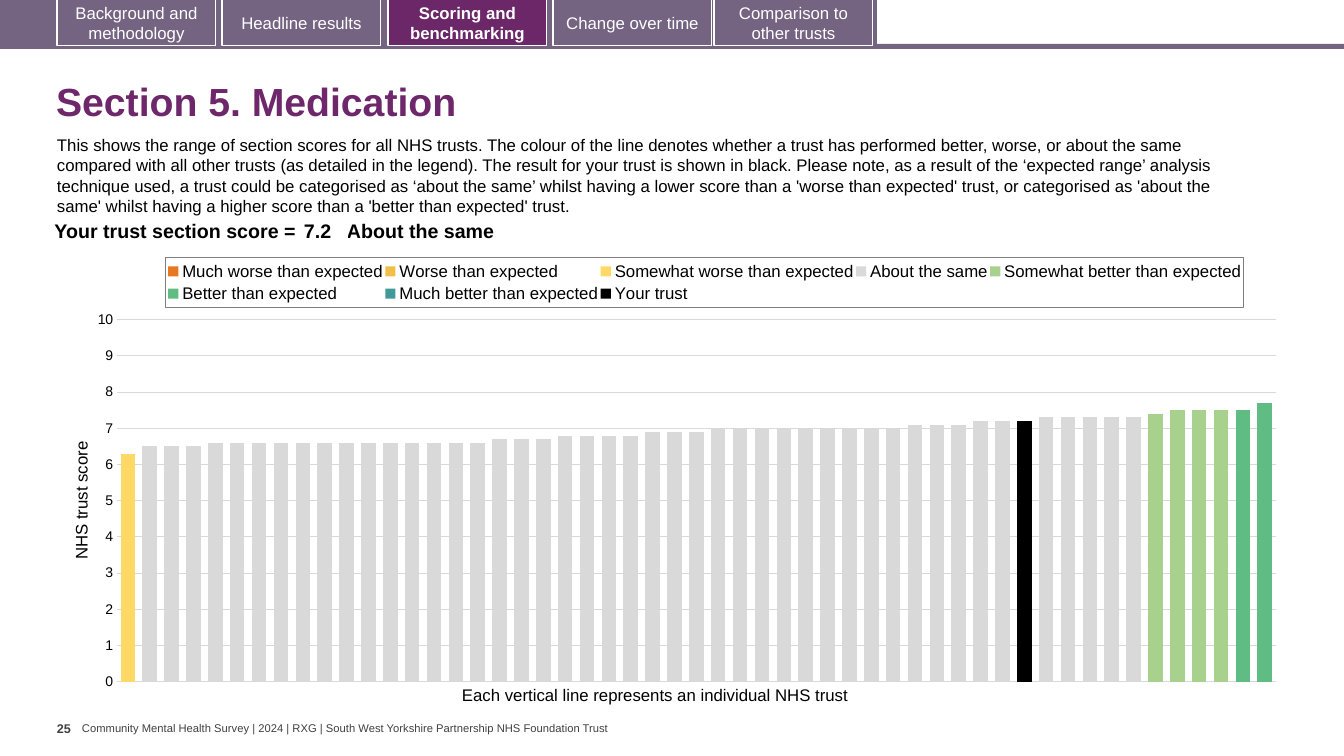
from copy import deepcopy

from lxml import etree
from pptx import Presentation
from pptx.chart.data import CategoryChartData
from pptx.dml.color import RGBColor
from pptx.enum.chart import XL_CHART_TYPE, XL_LEGEND_POSITION, XL_TICK_MARK
from pptx.enum.shapes import MSO_SHAPE
from pptx.enum.text import MSO_ANCHOR, MSO_AUTO_SIZE, PP_ALIGN
from pptx.oxml import parse_xml
from pptx.oxml.ns import qn
from pptx.util import Pt

RECT = MSO_SHAPE.RECTANGLE
MIDDLE, TOP = MSO_ANCHOR.MIDDLE, MSO_ANCHOR.TOP
LEFT, CENTER, RIGHT = PP_ALIGN.LEFT, PP_ALIGN.CENTER, PP_ALIGN.RIGHT
NO_TICK = XL_TICK_MARK.NONE
C_NS = "http://schemas.openxmlformats.org/drawingml/2006/chart"
A_NS = "http://schemas.openxmlformats.org/drawingml/2006/main"

TITLE = "Section 5. Medication"
INTRO = (
    "This shows the range of section scores for all NHS trusts. The colour of the line denotes "
    "whether a trust has performed better, worse, or about the same compared with all other trusts "
    "(as detailed in the legend). The result for your trust is shown in black. Please note, as a "
    "result of the ‘expected range’ analysis technique used, a trust could be categorised as ‘about "
    "the same’ whilst having a lower score than a 'worse than expected' trust, or categorised as "
    "'about the same' whilst having a higher score than a 'better than expected' trust."
)
CAPTION = "Each vertical line represents an individual NHS trust"
FOOTER = ("Community Mental Health Survey | 2024 | RXG | "
          "South West Yorkshire Partnership NHS Foundation Trust")
PAGE = "25"
AXIS_TITLE = "NHS trust score"

PURPLE, ACTIVE = "756382", "6B2768"
# label, left
TABS = [
    ("Background and methodology", 57),
    ("Headline results", 222),
    ("Scoring and benchmarking", 388),
    ("Change over time", 553),
    ("Comparison to other trusts", 714),
]
ACTIVE_TAB = "Scoring and benchmarking"

# text, column width, side margin, alignment
SCORE_CELLS = [
    ("Your trust section score =", 265, 4, RIGHT),
    ("7.2", 47, 4, LEFT),
    ("About the same", 866, 0, LEFT),
]

TRUSTS = 53
# name, colour, position of the first bar, (score, number of trusts)
BANDS = [
    ("Much worse than expected", "E87722", 0, []),
    ("Worse than expected", "F1BE48", 0, []),
    ("Somewhat worse than expected", "FFD966", 0, [(6.3, 1)]),
    ("About the same", "D9D9D9", 1,
     [(6.5, 3), (6.6, 13), (6.7, 3), (6.8, 4), (6.9, 3), (7, 9), (7.1, 3), (7.2, 3), (7.3, 5)]),
    ("Somewhat better than expected", "A9D18E", 47, [(7.4, 1), (7.5, 3)]),
    ("Better than expected", "5FBD83", 51, [(7.5, 1), (7.7, 1)]),
    ("Much better than expected", "419999", 0, []),
    ("Your trust", "000000", 41, [(7.2, 1)]),
]


def px(n):
    return round(n * 914400 / 100.8)


def box(*lengths):
    return [px(n) for n in lengths]


def rgb(color):
    return RGBColor.from_string(color)


def style(font, size, color="000000", bold=False):
    font.name, font.size, font.bold = "Arial", Pt(size), bold
    font.color.rgb = rgb(color)


def write(tf, text, size, color="000000", bold=False, align=LEFT):
    tf.text = text
    p = tf.paragraphs[0]
    p.alignment = align
    style(p.runs[0].font, size, color, bold)


def add_rect(s, at, fill, line=None):
    sp = s.shapes.add_shape(RECT, *box(*at))
    sp.shadow.inherit = False
    sp.fill.solid()
    sp.fill.fore_color.rgb = rgb(fill)
    if line:
        sp.line.color.rgb = rgb(line)
        sp.line.width = Pt(0.75)
    else:
        sp.line.fill.background()
    return sp


def add_text(s, at, text, size, color="000000", bold=False, wrap=False,
             anchor=TOP, margins=(10, 5)):
    tf = s.shapes.add_textbox(*box(*at)).text_frame
    tf.word_wrap, tf.vertical_anchor = wrap, anchor
    tf.margin_left = tf.margin_right = px(margins[0])
    tf.margin_top = tf.margin_bottom = px(margins[1])
    write(tf, text, size, color, bold)


def add_tabs(s):
    add_rect(s, (0, 44, 1344, 5), PURPLE)
    add_rect(s, (0, 0, 877, 47), PURPLE)
    for label, left in TABS:
        active = label == ACTIVE_TAB
        sp = add_rect(s, (left, -1, 159, 47), ACTIVE if active else PURPLE, "FFFFFF")
        sp.text_frame.word_wrap = True
        sp.text_frame.vertical_anchor = MIDDLE
        write(sp.text_frame, label, 12, "FFFFFF", active, CENTER)


def add_score(s):
    width = sum(cell[1] for cell in SCORE_CELLS)
    table = s.shapes.add_table(1, len(SCORE_CELLS), *box(35, 217, width, 31)).table
    table.first_row = table.horz_banding = False
    for i, (text, col_width, margin, align) in enumerate(SCORE_CELLS):
        table.columns[i].width = px(col_width)
        cell = table.cell(0, i)
        cell.fill.background()
        cell.margin_left = cell.margin_right = px(margin)
        cell.margin_top = cell.margin_bottom = px(4)
        write(cell.text_frame, text, 14, bold=True, align=align)


def set_layout(parent, index, fractions, inner=False):
    """Place a chart part by fractions (x, y, w, h) of the chart's size."""
    for old in parent.findall(qn("c:layout")):
        parent.remove(old)
    layout = etree.Element(qn("c:layout"))
    manual = etree.SubElement(layout, qn("c:manualLayout"))
    items = [("layoutTarget", "inner")] if inner else []
    items += [("xMode", "edge"), ("yMode", "edge")] + list(zip("xywh", fractions))
    for tag, value in items:
        etree.SubElement(manual, qn("c:" + tag)).set("val", str(value))
    parent.insert(index, layout)


def move_last_to_second_axis(chart):
    area = chart._chartSpace.chart.plotArea
    first = area.find(qn("c:barChart"))
    second = deepcopy(first)
    first.remove(first.findall(qn("c:ser"))[-1])
    for ser in second.findall(qn("c:ser"))[:-1]:
        second.remove(ser)
    first.addnext(second)
    cat, val = (deepcopy(axis._element) for axis in (chart.category_axis, chart.value_axis))
    for axis, own, other in ((cat, "50010", "50020"), (val, "50020", "50010")):
        axis.find(qn("c:axId")).set("val", own)
        axis.find(qn("c:crossAx")).set("val", other)
    for ref, own in zip(second.findall(qn("c:axId")), ("50010", "50020")):
        ref.set("val", own)
    for tag in ("c:majorGridlines", "c:title"):
        val.remove(val.find(qn(tag)))
    for tag, value in (("axPos", "r"), ("tickLblPos", "none"), ("crosses", "max")):
        val.find(qn("c:" + tag)).set("val", value)
    chart.value_axis._element.addnext(cat)
    cat.addnext(val)


def add_scores_chart(s):
    data = CategoryChartData()
    data.categories = [str(n + 1) for n in range(TRUSTS)]
    for name, _, start, runs in BANDS:
        values = [None] * start + [score for score, count in runs for _ in range(count)]
        data.add_series(name, values + [None] * (TRUSTS - len(values)))
    chart = s.shapes.add_chart(XL_CHART_TYPE.COLUMN_CLUSTERED, *box(68, 249, 1225, 448), data).chart
    chart.has_title = False
    style(chart.font, 10)
    plot = chart.plots[0]
    plot.gap_width, plot.overlap, plot.vary_by_categories = 50, 100, False
    for series, band in zip(plot.series, BANDS):
        series.format.fill.solid()
        series.format.fill.fore_color.rgb = rgb(band[1])

    chart.category_axis.visible = False
    axis = chart.value_axis
    axis.minimum_scale, axis.maximum_scale, axis.major_unit = 0, 10, 1
    axis.major_tick_mark = axis.minor_tick_mark = NO_TICK
    axis.format.line.fill.background()
    axis.major_gridlines.format.line.color.rgb = rgb("D9D9D9")
    axis.major_gridlines.format.line.width = Pt(0.75)
    axis.tick_labels.number_format, axis.tick_labels.number_format_is_linked = "0", False
    style(axis.tick_labels.font, 10)
    write(axis.axis_title.text_frame, AXIS_TITLE, 12, align=CENTER)

    chart.has_legend = True
    legend = chart.legend
    legend.position, legend.include_in_layout = XL_LEGEND_POSITION.TOP, False
    style(legend.font, 12)
    set_layout(legend._element, 1, (0.08, 0.02, 0.88, 0.11))
    legend._element.find(qn("c:overlay")).addnext(parse_xml(
        f'<c:spPr xmlns:c="{C_NS}" xmlns:a="{A_NS}"><a:ln w="9525"><a:solidFill>'
        '<a:srgbClr val="7F7F7F"/></a:solidFill></a:ln></c:spPr>'))
    set_layout(chart._chartSpace.chart.plotArea, 0, (0.04, 0.158, 0.946, 0.808), inner=True)
    move_last_to_second_axis(chart)


def main():
    prs = Presentation()
    prs.slide_width, prs.slide_height = box(1344, 756)
    s = prs.slides.add_slide(prs.slide_layouts[5])
    add_tabs(s)
    title = s.shapes.title
    title.left, title.top, title.width, title.height = box(46, 67, 1259, 73)
    tf = title.text_frame
    tf.auto_size, tf.vertical_anchor = MSO_AUTO_SIZE.NONE, MIDDLE
    write(tf, TITLE, 28, "6D276A", True)
    tf.paragraphs[0].line_spacing = 0.9
    add_text(s, (47, 130, 1223, 92), INTRO, 12, wrap=True)
    add_scores_chart(s)
    add_score(s)
    add_text(s, (452, 680, 414, 30), CAPTION, 12)
    add_text(s, (57, 716, 25, 40), PAGE, 9, "404040", True, margins=(0, 5))
    add_text(s, (82, 722, 534, 13), FOOTER, 8, "404040", anchor=MIDDLE, margins=(0, 0))
    prs.save("out.pptx")


if __name__ == "__main__":
    main()
